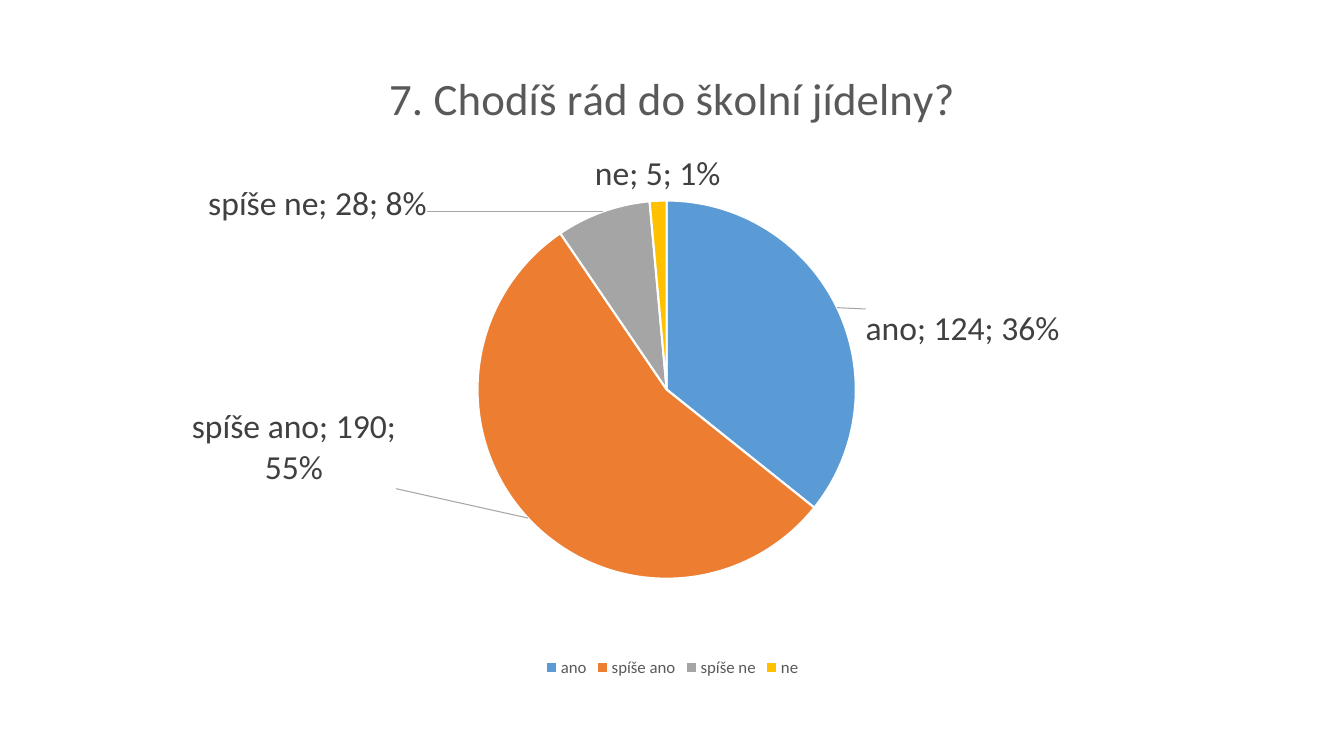
from dataclasses import dataclass

from lxml.etree import SubElement
from pptx import Presentation
from pptx.chart.data import CategoryChartData
from pptx.dml.color import RGBColor
from pptx.enum.chart import XL_CHART_TYPE as ChartType
from pptx.enum.chart import XL_LABEL_POSITION as LabelPosition
from pptx.enum.chart import XL_LEGEND_POSITION as LegendPosition
from pptx.oxml import parse_xml
from pptx.oxml.ns import nsdecls, qn
from pptx.util import Inches, Pt


@dataclass(frozen=True)
class Theme:
    font: str = "Calibri"
    heading: str = "595959"
    label: str = "404040"
    leader: str = "A6A6A6"
    border: str = "FFFFFF"
    slices: tuple = ("5B9BD5", "ED7D31", "A5A5A5", "FFC000")
    title_size: int = 32
    label_size: int = 24
    legend_size: int = 12


class SlideBuilder:
    def __init__(self, slide, theme):
        self.slide = slide
        self.theme = theme

    def style_font(self, font, size, color):
        font.name = self.theme.font
        font.size = Pt(size)
        font.bold = False
        font.color.rgb = RGBColor.from_string(color)

    def manual_layout(self, **settings):
        layout = parse_xml(f"<c:layout {nsdecls('c')}><c:manualLayout/></c:layout>")
        for name, value in settings.items():
            SubElement(layout[0], qn(f"c:{name}")).set("val", str(value))
        return layout

    def pie(self, title, answers, area, plot_area, label_shifts):
        data = CategoryChartData()
        data.categories = list(answers)
        data.add_series(title, list(answers.values()))
        frame = self.slide.shapes.add_chart(
            ChartType.PIE, *(Inches(length) for length in area), data
        )
        chart = frame.chart
        chart.font.name = self.theme.font
        chart.font.size = Pt(10)
        self.title(chart, title)
        self.legend(chart)
        plot = chart.plots[0]
        plot.vary_by_categories = True
        self.slices(plot.series[0])
        self.labels(plot.series[0], label_shifts)
        self.place_plot(chart, plot_area)

    def title(self, chart, text):
        chart.has_title = True
        chart.chart_title.include_in_layout = False
        para = chart.chart_title.text_frame.paragraphs[0]
        para.text = text
        self.style_font(para.font, self.theme.title_size, self.theme.heading)

    def legend(self, chart):
        chart.has_legend = True
        chart.legend.position = LegendPosition.BOTTOM
        chart.legend.include_in_layout = False
        self.style_font(chart.legend.font, self.theme.legend_size, self.theme.heading)

    def slices(self, series):
        for index, color in enumerate(self.theme.slices):
            style = series.points[index].format
            style.fill.solid()
            style.fill.fore_color.rgb = RGBColor.from_string(color)
            style.line.color.rgb = RGBColor.from_string(self.theme.border)
            style.line.width = Pt(1.5)

    def labels(self, series, shifts):
        labels = series.data_labels
        labels.show_category_name = True
        labels.show_value = True
        labels.show_percentage = True
        labels.position = LabelPosition.OUTSIDE_END
        self.style_font(labels.font, self.theme.label_size, self.theme.label)
        for index, (x, y) in shifts.items():
            label = series.points[index].data_label
            label.position = LabelPosition.OUTSIDE_END
            self.style_font(label.font, self.theme.label_size, self.theme.label)
        root = series._element.find(qn("c:dLbls"))
        for item in root.findall(qn("c:dLbl")):
            index_mark = item.find(qn("c:idx"))
            x, y = shifts[int(index_mark.get("val"))]
            index_mark.addnext(self.manual_layout(x=x, y=y))
            for name in ("showCatName", "showVal", "showPercent"):
                item.find(qn(f"c:{name}")).set("val", "1")
        for item in [root, *root.findall(qn("c:dLbl"))]:
            separator = parse_xml(f"<c:separator {nsdecls('c')}>; </c:separator>")
            item.find(qn("c:showBubbleSize")).addnext(separator)
        self.leader_lines(root)

    def leader_lines(self, root):
        for old in root.findall(qn("c:showLeaderLines")):
            root.remove(old)
        SubElement(root, qn("c:showLeaderLines")).set("val", "1")
        root.append(parse_xml(
            f"<c:leaderLines {nsdecls('c', 'a')}><c:spPr><a:ln w='9525'><a:solidFill>"
            f"<a:srgbClr val='{self.theme.leader}'/></a:solidFill></a:ln></c:spPr>"
            "</c:leaderLines>"
        ))

    def place_plot(self, chart, plot_area):
        x, y, width, height = plot_area
        element = chart._chartSpace.chart.plotArea
        for old in element.findall(qn("c:layout")):
            element.remove(old)
        element.insert(0, self.manual_layout(
            layoutTarget="inner", xMode="edge", yMode="edge", x=x, y=y, w=width, h=height
        ))


def main():
    deck = Presentation()
    deck.slide_width, deck.slide_height = Inches(13.33), Inches(7.5)
    builder = SlideBuilder(deck.slides.add_slide(deck.slide_layouts[6]), Theme())
    builder.pie(
        "7. Chodíš rád do školní jídelny?",
        {"ano": 124, "spíše ano": 190, "spíše ne": 28, "ne": 5},
        area=(0.92, 0.4, 11.5, 6.36),
        plot_area=(0.33, 0.25, 0.33, 0.59),
        label_shifts={0: (0.02, 0.07), 1: (-0.11, -0.18), 2: (-0.15, 0.03)},
    )
    deck.save("out.pptx")


if __name__ == "__main__":
    main()
